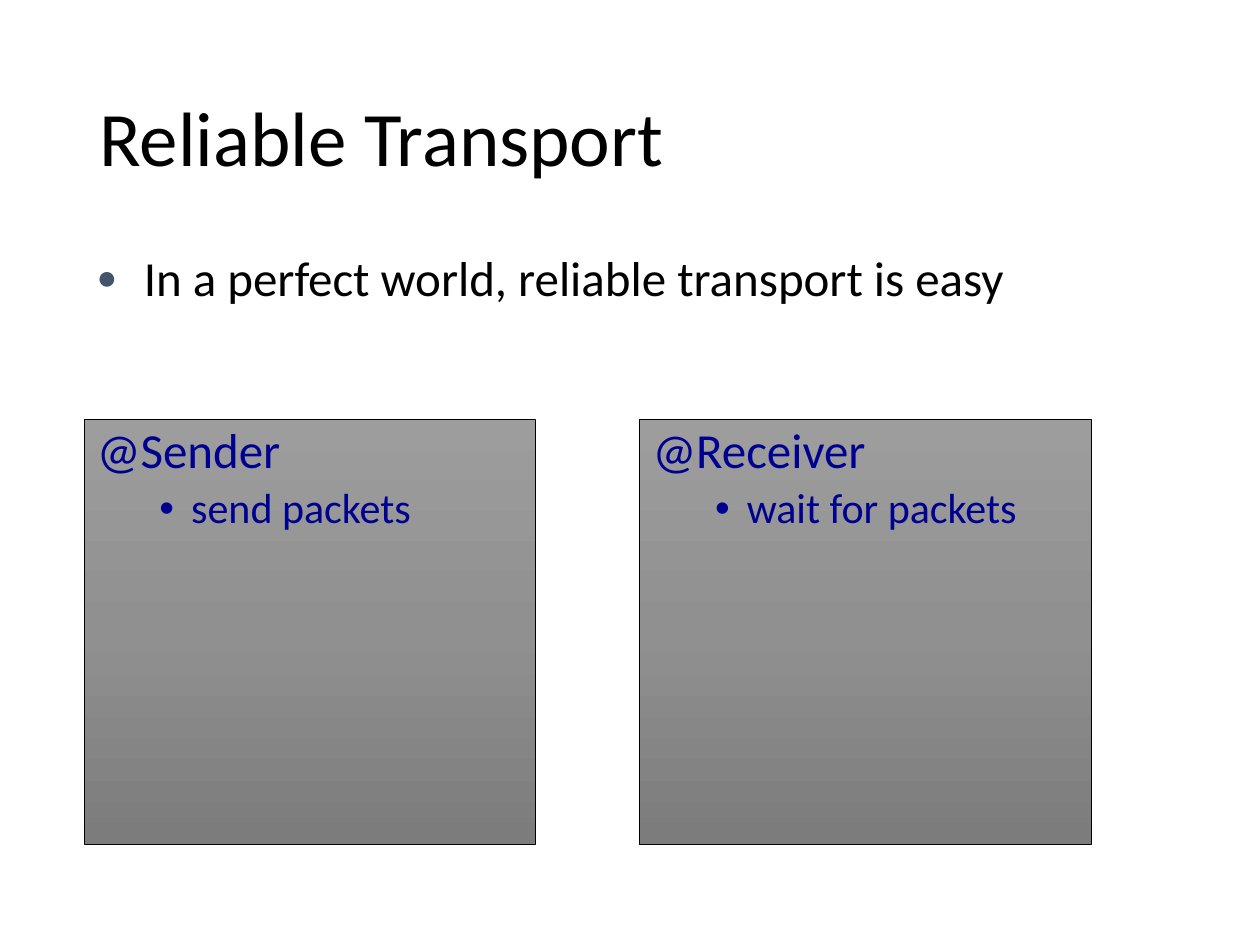
from copy import deepcopy

from lxml import etree
from pptx import Presentation
from pptx.dml.color import RGBColor
from pptx.enum.text import MSO_ANCHOR, MSO_AUTO_SIZE, PP_ALIGN
from pptx.oxml.ns import qn
from pptx.util import Cm, Pt

LEFT, TOP, MIDDLE = PP_ALIGN.LEFT, MSO_ANCHOR.TOP, MSO_ANCHOR.MIDDLE
NO_FIT = MSO_AUTO_SIZE.NONE
TWO_CONTENT = 3
FONT = "Calibri"
COLORS = {"text": "000000", "panel_text": "000090", "bullet": "44546A",
          "line": "000000"}
PANEL_STOPS = [(0, "9D9D9D"), (0.5, "909090"), (1, "7C7C7C")]
PANELS = [("@Sender", "send packets"), ("@Receiver", "wait for packets")]
PANEL_LEFT, PANEL_STEP = 1.7, 11.2


def rgb(name):
    return RGBColor.from_string(COLORS[name])


def set_attrs(obj, values):
    for name, value in values.items():
        setattr(obj, name, value)


def place(sp, left, top, width, height):
    set_attrs(sp, {"left": Cm(left), "top": Cm(top),
                   "width": Cm(width), "height": Cm(height)})


def set_frame(tf, anchor):
    set_attrs(tf, {"word_wrap": True, "auto_size": NO_FIT,
                   "vertical_anchor": anchor})


def write(p, text, size, color, **spacing):
    set_attrs(p, {"alignment": LEFT, **spacing})
    r = p.add_run()
    r.text = text
    set_attrs(r.font, {"name": FONT, "size": Pt(size)})
    r.font.color.rgb = rgb(color)


def set_bullet(p, char=None, margin=0, hang=0, color=None, percent=None):
    pPr = p._p.get_or_add_pPr()
    pPr.set("marL", str(Cm(margin)))
    pPr.set("indent", str(-Cm(hang)))
    if color:
        clr = etree.SubElement(pPr, qn("a:buClr"))
        etree.SubElement(clr, qn("a:srgbClr"), val=COLORS[color])
    if percent:
        etree.SubElement(pPr, qn("a:buSzPct"), val=str(percent * 1000))
    if char:
        etree.SubElement(pPr, qn("a:buFont"), typeface="Arial")
        etree.SubElement(pPr, qn("a:buChar"), char=char)
    else:
        etree.SubElement(pPr, qn("a:buNone"))


def fill_gradient(sp, stops):
    sp.fill.gradient()
    gs_list = sp._element.spPr.find(".//" + qn("a:gsLst"))
    while len(gs_list) < len(stops):
        gs_list.append(deepcopy(gs_list[0]))
    for stop, (position, color) in zip(sp.fill.gradient_stops, stops):
        stop.position = position
        stop.color.rgb = RGBColor.from_string(color)
    sp.fill.gradient_angle = 270


def add_title(s, text):
    sp = s.shapes.title
    place(sp, 1.75, 1.02, 21.9, 3.68)
    set_frame(sp.text_frame, MIDDLE)
    write(sp.text_frame.paragraphs[0], text, 44, "text", line_spacing=0.9)


def add_panel(sp, left, heading, item):
    place(sp, left, 8.46, 9.1, 8.56)
    fill_gradient(sp, PANEL_STOPS)
    sp.line.color.rgb = rgb("line")
    sp.line.width = Pt(0.5)
    tf = sp.text_frame
    set_frame(tf, TOP)
    p = tf.paragraphs[0]
    write(p, heading, 28, "panel_text", line_spacing=0.9, space_before=Pt(10))
    set_bullet(p)
    p = tf.add_paragraph()
    write(p, item, 24, "panel_text", level=1, line_spacing=0.9,
          space_before=Pt(5))
    set_bullet(p, "•", 1.9, 0.64)


def add_statement(s, text):
    sp = s.shapes.add_textbox(Cm(1.7), Cm(4.87), Cm(22.43), Cm(3.38))
    set_frame(sp.text_frame, TOP)
    p = sp.text_frame.paragraphs[0]
    write(p, text, 28, "text", space_before=Pt(5.6))
    set_bullet(p, "●", 0.95, 0.95, "bullet", 70)


def main():
    prs = Presentation()
    set_attrs(prs, {"slide_width": Cm(25.4), "slide_height": Cm(19.05)})
    s = prs.slides.add_slide(prs.slide_layouts[TWO_CONTENT])

    # Title
    add_title(s, "Reliable Transport")

    # Sender and receiver panels
    for i, (heading, item) in enumerate(PANELS):
        add_panel(s.placeholders[i + 1], PANEL_LEFT + i * PANEL_STEP,
                  heading, item)

    # Statement above the panels
    add_statement(s, "In a perfect world, reliable transport is easy")

    prs.save("out.pptx")


if __name__ == "__main__":
    main()
